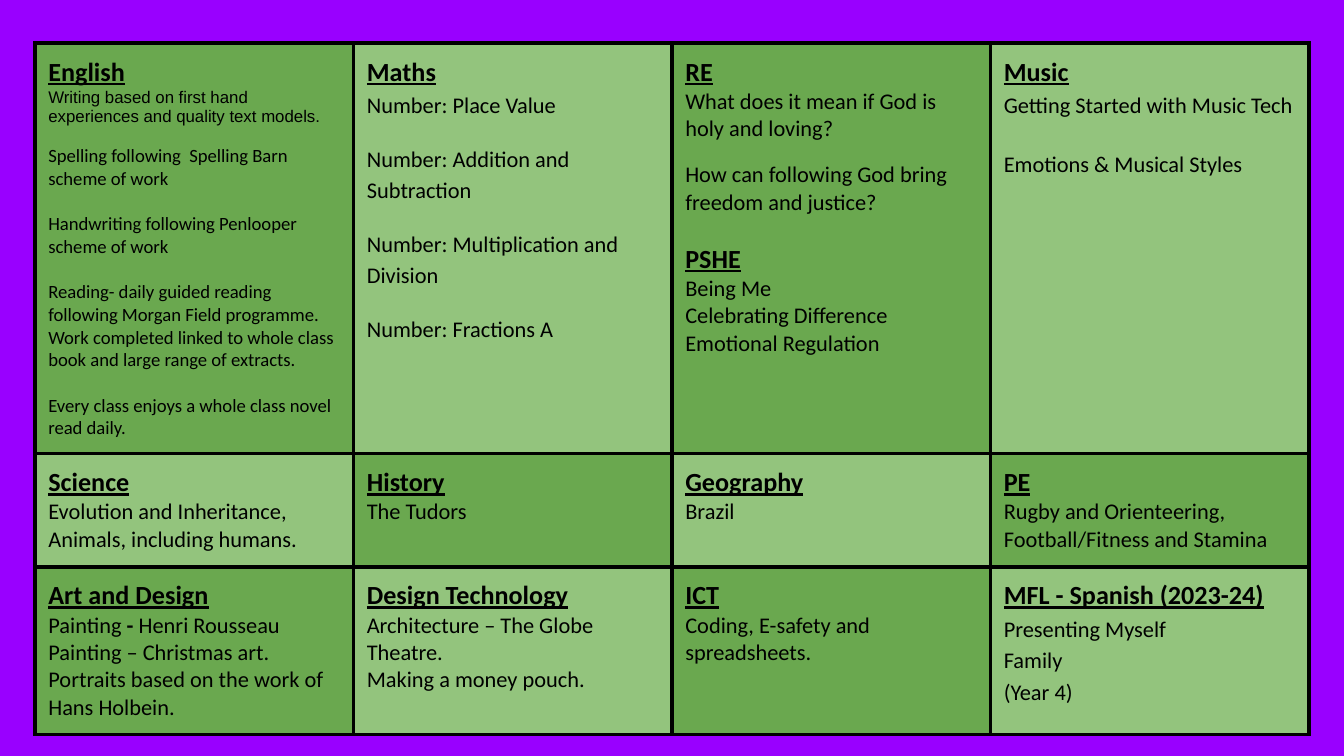
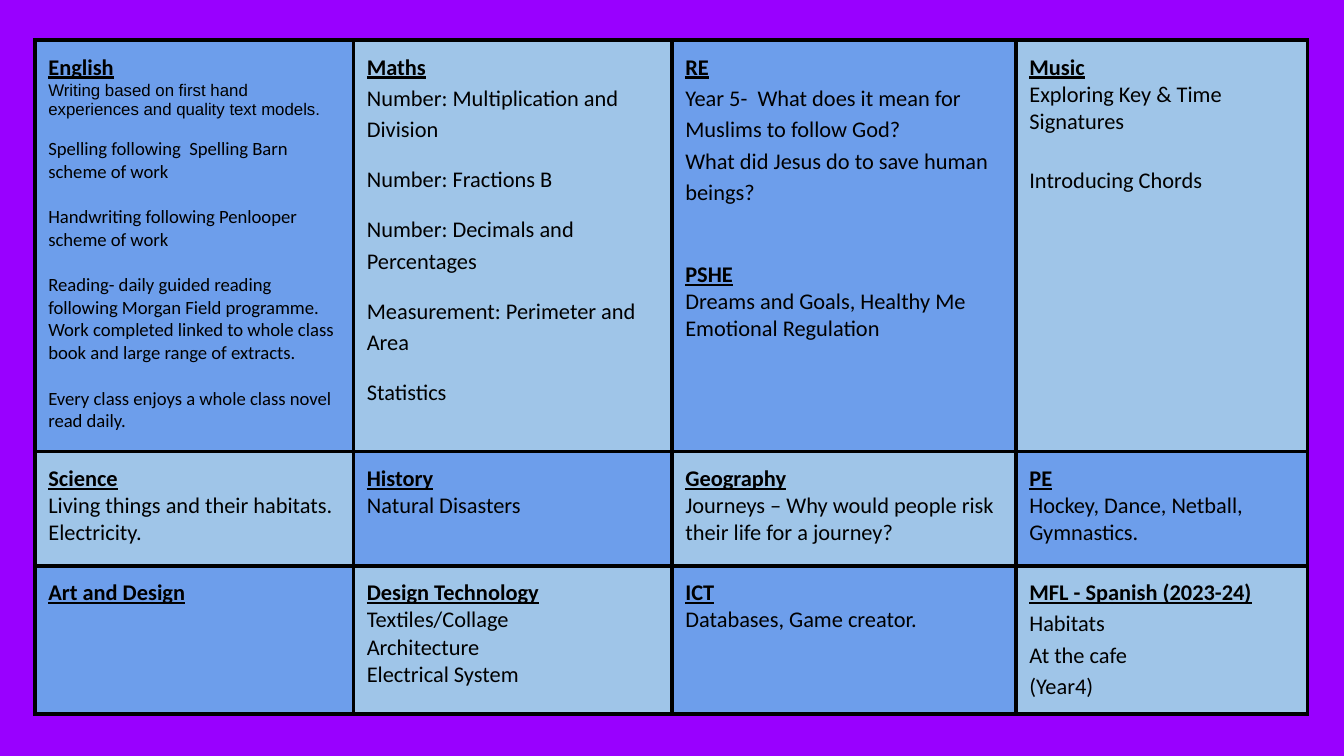
from dataclasses import dataclass

from lxml import etree
from pptx import Presentation
from pptx.dml.color import RGBColor
from pptx.oxml import ns
from pptx.util import Inches, Pt

PURPLE = RGBColor(0x99, 0x00, 0xFF)
BLACK = RGBColor(0x00, 0x00, 0x00)
GREENS = (RGBColor(0x6A, 0xA8, 0x4F), RGBColor(0x93, 0xC4, 0x7D))
BLUES = (RGBColor(0x6D, 0x9E, 0xEB), RGBColor(0x9F, 0xC5, 0xE8))
BORDER_WIDTH = Pt(2.25)
CELL_MARGIN = Inches(0.1)
TABLE_LEFT = 0.26
TOPIC_GAP = 14.6  # one 12 pt line, in points
ENGLISH_GAP = 12.2  # one 10 pt line, in points


@dataclass
class Line:
    """One paragraph; text is split at ** into normal and bold runs in turn."""
    text: str
    size: float = 12
    font: str = "Calibri"
    spacing: float = 1.0
    before: float = 0
    heading: bool = False


def heading(subject, size, before=0):
    return Line(subject, size, before=before, heading=True)


def loose(text, before=0):
    return Line(text, spacing=1.15, before=before)


ENGLISH = [
    Line("Writing based on first hand experiences and quality text models.", 9, "Arial"),
    Line("Spelling following  Spelling Barn scheme of work", 10, before=10.3),
    *(Line(text, 10, before=ENGLISH_GAP) for text in (
        "Handwriting following Penlooper scheme of work",
        "Reading- daily guided reading following Morgan Field programme. "
        "Work completed linked to whole class book and large range of extracts.",
        "Every class enjoys a whole class novel read daily.",
    )),
]

AUTUMN = [
    [
        ("English", ENGLISH),
        ("Maths", [
            loose("Number: Place Value"),
            loose("Number: Addition and Subtraction", 12),
            loose("Number: Multiplication and Division", 12),
            loose("Number: Fractions A", 12),
        ]),
        ("RE", [
            Line("What does it mean if God is holy and loving?"),
            Line("How can following God bring freedom and justice?", before=10),
            heading("PSHE", 14, TOPIC_GAP),
            Line("Being Me"),
            Line("Celebrating Difference"),
            Line("Emotional Regulation"),
        ]),
        ("Music", [
            loose("Getting Started with Music Tech"),
            loose("Emotions & Musical Styles", TOPIC_GAP),
        ]),
    ],
    [
        ("Science", [Line("Evolution and Inheritance, Animals, including humans.")]),
        ("History", [Line("The Tudors")]),
        ("Geography", [Line("Brazil")]),
        ("PE", [Line("Rugby and Orienteering, Football/Fitness and Stamina")]),
    ],
    [
        ("Art and Design", [
            Line("Painting** - **Henri Rousseau"),
            Line("Painting – Christmas art. Portraits based on the work of Hans Holbein."),
        ]),
        ("Design Technology", [
            Line("Architecture – The Globe Theatre."),
            Line("Making a money pouch."),
        ]),
        ("ICT", [Line("Coding, E-safety and spreadsheets.")]),
        ("MFL - Spanish (2023-24)", [
            loose("Presenting Myself"), loose("Family"), loose("(Year 4)"),
        ]),
    ],
]

SPRING = [
    [
        ("English", ENGLISH),
        ("Maths", [
            loose("Number: Multiplication and Division"),
            loose("Number: Fractions B", 10),
            loose("Number: Decimals and Percentages", 10),
            loose("Measurement: Perimeter and Area", 10),
            loose("Statistics", 10),
        ]),
        ("RE", [
            loose("Year 5-  What does it mean for Muslims to follow God?"),
            loose("What did Jesus do to save human beings?"),
            heading("PSHE", 12, 2 * TOPIC_GAP),
            Line("Dreams and Goals, Healthy Me"),
            Line("Emotional Regulation"),
        ]),
        ("Music", [
            Line("Exploring Key & Time Signatures"),
            loose("Introducing Chords", TOPIC_GAP),
        ]),
    ],
    [
        ("Science", [Line("Living things and their habitats."), Line("Electricity.")]),
        ("History", [Line("Natural Disasters")]),
        ("Geography", [Line("Journeys – Why would people risk their life for a journey?")]),
        ("PE", [Line("Hockey, Dance, Netball, Gymnastics.")]),
    ],
    [
        ("Art and Design", []),
        ("Design Technology", [
            Line("Textiles/Collage"), Line("Architecture"), Line("Electrical System"),
        ]),
        ("ICT", [Line("Databases, Game creator.")]),
        ("MFL - Spanish (2023-24)", [
            loose("Habitats"), loose("At the cafe"), loose("(Year4)"),
        ]),
    ],
]


def add_borders(cell):
    properties = cell._tc.get_or_add_tcPr()
    for position, side in enumerate(("lnL", "lnR", "lnT", "lnB")):
        border = etree.Element(ns.qn(f"a:{side}"), w=str(BORDER_WIDTH))
        fill = etree.SubElement(border, ns.qn("a:solidFill"))
        etree.SubElement(fill, ns.qn("a:srgbClr"), val=str(BLACK))
        properties.insert(position, border)


def write_line(paragraph, line):
    paragraph.line_spacing = line.spacing
    paragraph.space_before = Pt(line.before)
    for index, words in enumerate(line.text.split("**")):
        run = paragraph.add_run()
        run.text = words
        run.font.name = line.font
        run.font.size = Pt(line.size)
        run.font.color.rgb = BLACK
        run.font.bold = line.heading or index % 2 == 1
        run.font.underline = line.heading


def fill_cell(cell, lines, color):
    cell.margin_left = cell.margin_right = CELL_MARGIN
    cell.margin_top = cell.margin_bottom = CELL_MARGIN
    cell.fill.solid()
    cell.fill.fore_color.rgb = color
    add_borders(cell)
    frame = cell.text_frame
    for index, line in enumerate(lines):
        write_line(frame.add_paragraph() if index else frame.paragraphs[0], line)


def add_term(prs, subjects, top, widths, heights, shades, heading_size):
    """Add a slide whose subject table alternates two shades like a chessboard."""
    slide = prs.slides.add_slide(prs.slide_layouts[6])
    table = slide.shapes.add_table(
        len(heights), len(widths), Inches(TABLE_LEFT), Inches(top),
        Inches(sum(widths)), Inches(sum(heights))).table
    table.first_row = table.horz_banding = False
    for column, width in zip(table.columns, widths):
        column.width = Inches(width)
    for row, height in zip(table.rows, heights):
        row.height = Inches(height)
    for r, row_subjects in enumerate(subjects):
        for c, (subject, topics) in enumerate(row_subjects):
            lines = [heading(subject, heading_size), *topics]
            fill_cell(table.cell(r, c), lines, shades[(r + c) % 2])


def main():
    prs = Presentation()
    prs.slide_width = Inches(10)
    prs.slide_height = prs.slide_width * 9 // 16
    background = prs.slide_master.background.fill
    background.solid()
    background.fore_color.rgb = PURPLE
    add_term(prs, AUTUMN, 0.32, [2.37] * 4, [3.04, 0.84, 1.25], GREENS, 14)
    add_term(prs, SPRING, 0.3, [2.37, 2.37, 2.56, 2.17], [3.06, 0.85, 1.1], BLUES, 12)
    prs.save("out.pptx")


if __name__ == "__main__":
    main()
